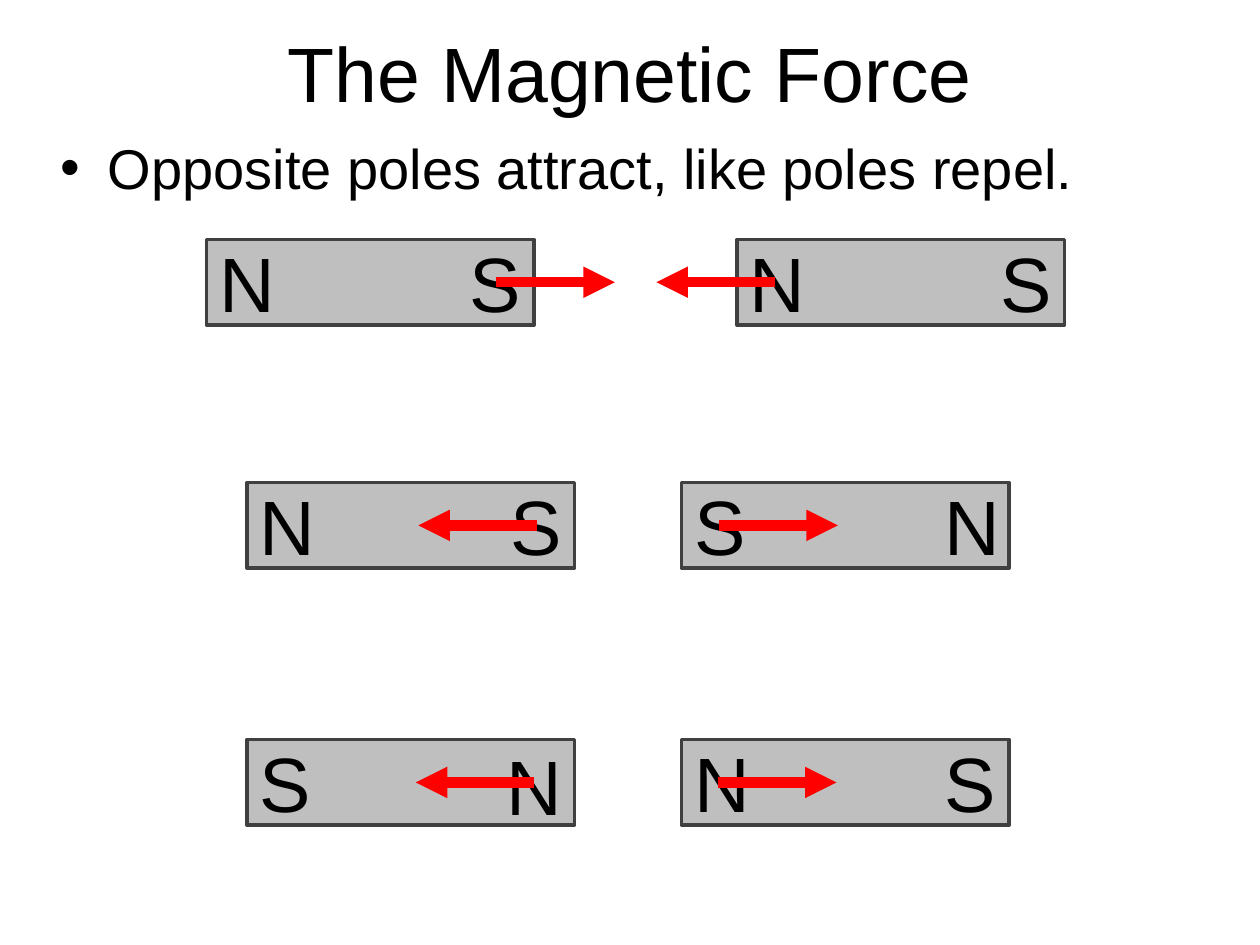
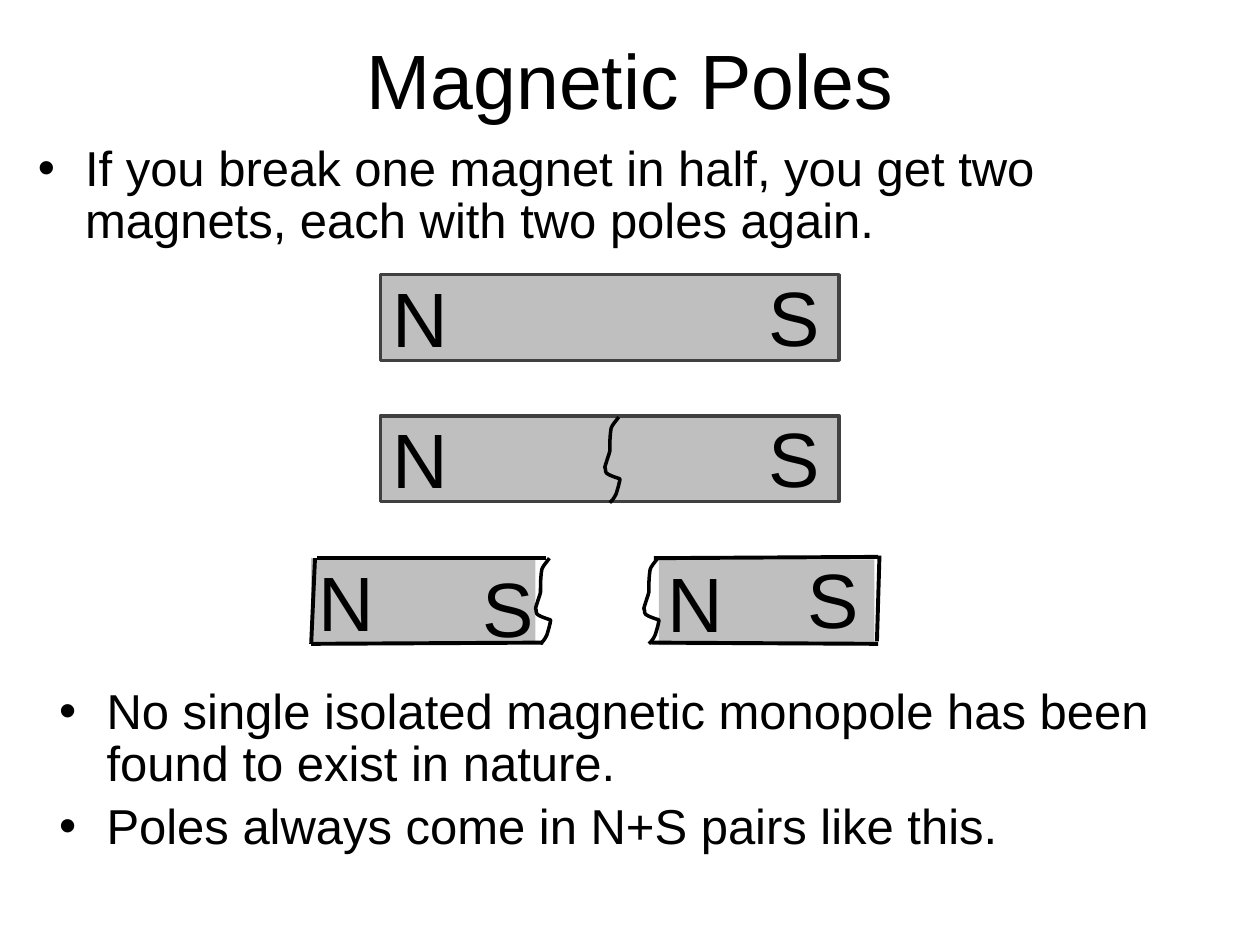
from lxml.etree import SubElement
from pptx import Presentation
from pptx.dml.color import RGBColor
from pptx.enum.shapes import MSO_CONNECTOR as Connector, MSO_SHAPE as Shape
from pptx.enum.text import MSO_ANCHOR as Anchor, MSO_AUTO_SIZE as AutoSize, PP_ALIGN as Align
from pptx.oxml.ns import qn
from pptx.util import Inches, Pt

# All lengths are in cells of a grid with 100 columns and 75 rows.
COLUMNS, ROWS = 100, 75
CELL = Inches(0.1)
FONT = "Arial"
COLOURS = {"ink": "000000", "magnet": "BFBFBF", "edge": "404040", "force": "FF0000"}
MAGNET_HEIGHT = 6.8
LETTER_HEIGHT = 8.4
LETTER_WIDTHS = {"N": 6.5, "S": 6.1}
LETTER_RISE = -0.8
ARROW_LENGTH = 9.4

# Jagged break: a start point, then (control, control, end) for each curve.
BREAK_START = (1.1, 0)
BREAK_CURVES = [
    ((0.9, 0.3), (0.6, 0.6), (0.5, 0.9)),
    ((0.4, 1.5), (0.4, 2.1), (0.4, 2.7)),
    ((0.3, 3.1), (0.1, 3.6), (0, 4)),
    ((0.1, 4.1), (0, 4.4), (0.2, 4.5)),
    ((0.5, 4.7), (1.2, 4.9), (1.2, 4.9)),
    ((1.2, 5.1), (1, 5.8), (0.9, 6.1)),
    ((0.7, 6.5), (0.6, 6.6), (0.4, 6.8)),
]
CURVE_STEPS = 6


def cells(*counts):
    """Turn numbers of grid cells into lengths."""
    return [round(count * CELL) for count in counts]


def colour(name):
    return RGBColor.from_string(COLOURS[name])


def set_line(line, name, width):
    line.color.rgb = colour(name)
    line.width = Pt(width)


def add_span(para, text, size):
    span = para.add_run()
    span.text = text
    span.font.name = FONT
    span.font.size = Pt(size)
    span.font.color.rgb = colour("ink")


def place(holder, area):
    holder.left, holder.top, holder.width, holder.height = cells(*area)
    holder.text_frame.auto_size = AutoSize.NONE


def fill_title(slide, text, area):
    title = slide.shapes.title
    place(title, area)
    title.text_frame.vertical_anchor = Anchor.MIDDLE
    para = title.text_frame.paragraphs[0]
    para.alignment = Align.CENTER
    add_span(para, text, 44)


def fill_list(holder, items, area, size, spacing=1.0):
    place(holder, area)
    frame = holder.text_frame
    for index, item in enumerate(items):
        para = frame.add_paragraph() if index else frame.paragraphs[0]
        para.line_spacing = spacing
        add_span(para, item, size)


def add_bar(shapes, left, top, width):
    bar = shapes.add_shape(Shape.RECTANGLE, *cells(left, top, width, MAGNET_HEIGHT))
    bar.shadow.inherit = False
    bar.fill.solid()
    bar.fill.fore_color.rgb = colour("magnet")
    bar.line.fill.background()
    return bar


def add_pole(shapes, letter, left, top):
    box = shapes.add_textbox(*cells(left, top, LETTER_WIDTHS[letter], LETTER_HEIGHT))
    box.text_frame.word_wrap = False
    box.text_frame.auto_size = AutoSize.SHAPE_TO_FIT_TEXT
    add_span(box.text_frame.paragraphs[0], letter, 44)


def add_magnet(shapes, left, top, width, poles, far_pole):
    """Draw an outlined bar; far_pole is the offset of its second letter."""
    set_line(add_bar(shapes, left, top, width).line, "edge", 2)
    add_pole(shapes, poles[0], left, top + LETTER_RISE)
    across, down = far_pole
    add_pole(shapes, poles[1], left + across, top + down)


def add_line(shapes, start, end, name="ink", width=2.25, arrow=False):
    line = shapes.add_connector(Connector.STRAIGHT, *cells(*start, *end))
    set_line(line.line, name, width)
    if arrow:
        SubElement(line.line._get_or_add_ln(), qn("a:tailEnd"), type="triangle")
    SubElement(line._element.spPr, qn("a:effectLst"))


def curve_points(start, curves):
    """Sample a chain of cubic Bezier curves."""
    for first, second, end in curves:
        for step in range(1, CURVE_STEPS + 1):
            t = step / CURVE_STEPS
            weights = ((1 - t) ** 3, 3 * t * (1 - t) ** 2, 3 * t * t * (1 - t), t ** 3)
            corners = (start, first, second, end)
            yield tuple(sum(w * c[axis] for w, c in zip(weights, corners)) for axis in (0, 1))
        start = end


def add_break(shapes, left, top):
    def shifted(point):
        return cells(left + point[0], top + point[1])

    builder = shapes.build_freeform(*shifted(BREAK_START))
    points = [shifted(point) for point in curve_points(BREAK_START, BREAK_CURVES)]
    builder.add_line_segments(points, close=False)
    crack = builder.convert_to_shape()
    crack.shadow.inherit = False
    crack.fill.background()
    set_line(crack.line, "ink", 2)


def add_half(shapes, bar, break_corner, edges, poles):
    """Draw one broken half: bar, jagged end, three straight edges, letters."""
    add_bar(shapes, *bar)
    add_break(shapes, *break_corner)
    for start, end in edges:
        add_line(shapes, start, end)
    for letter, left, top in poles:
        add_pole(shapes, letter, left, top)


def build_force_slide(deck):
    slide = deck.slides.add_slide(deck.slide_layouts.get_by_name("Title and Content"))
    fill_title(slide, "The Magnetic Force", (5, 1.6, 90, 8.2))
    fill_list(slide.placeholders[1], ["Opposite poles attract, like poles repel."],
              (3.8, 10.1, 90, 8.9), 32)

    usual = (19.9, LETTER_RISE)
    # Row top, magnets (left, poles, far pole), arrows (start, direction).
    rows = [
        (19, [(16.4, "NS", usual), (58.5, "NS", usual)], [(39.4, 1), (61.5, -1)]),
        (38.3, [(19.6, "NS", usual), (54.1, "SN", usual)], [(42.6, -1), (57.1, 1)]),
        (58.7, [(19.6, "SN", (19.6, -0.6)), (54.1, "NS", usual)], [(42.4, -1), (57, 1)]),
    ]
    for top, magnets, arrows in rows:
        shapes = slide.shapes.add_group_shape().shapes
        for left, poles, far_pole in magnets:
            add_magnet(shapes, left, top, 26, poles, far_pole)
        middle = top + MAGNET_HEIGHT / 2
        for start, direction in arrows:
            end = start + direction * ARROW_LENGTH
            add_line(shapes, (start, middle), (end, middle), "force", 6, arrow=True)


def build_poles_slide(deck):
    slide = deck.slides.add_slide(deck.slide_layouts.get_by_name("Two Content"))
    fill_title(slide, "Magnetic Poles", (5, 0, 90, 12.5))
    fill_list(slide.placeholders[1],
              ["If you break one magnet in half, you get two magnets, "
               "each with two poles again."],
              (2, 10.9, 93.7, 10), 28, 0.9)
    fill_list(slide.placeholders[2],
              ["No single isolated magnetic monopole has been found to exist in nature.",
               "Poles always come in N+S pairs like this."],
              (3.7, 54, 93.7, 15.3), 28, 0.9)

    whole, cracked, halves = (slide.shapes.add_group_shape().shapes for _ in range(3))
    for shapes, top in ((whole, 21.8), (cracked, 33)):
        add_magnet(shapes, 30.2, top, 36.4, "NS", (29.8, -0.9))
    add_break(cracked, 48, 33.1)

    add_half(halves, (24.7, 44.3, 17.8), (42.5, 44.3),
             [((43.1, 51), (24.7, 51.1)),
              ((43.3, 44.3), (25.2, 44.3)),
              ((24.7, 51.1), (25, 44.3))],
             [("N", 24.3, 43.5), ("S", 37.3, 44)])
    add_half(halves, (52.3, 44.4, 17.1), (51.1, 44.3),
             [((69.7, 51.1), (51.7, 51)),
              ((69.7, 44.2), (51.9, 44.3)),
              ((69.6, 50.9), (69.8, 44.1))],
             [("N", 52, 43.6), ("S", 63.1, 43.3)])


def main():
    deck = Presentation()
    deck.slide_width, deck.slide_height = cells(COLUMNS, ROWS)
    build_force_slide(deck)
    build_poles_slide(deck)
    deck.save("out.pptx")


if __name__ == "__main__":
    main()
